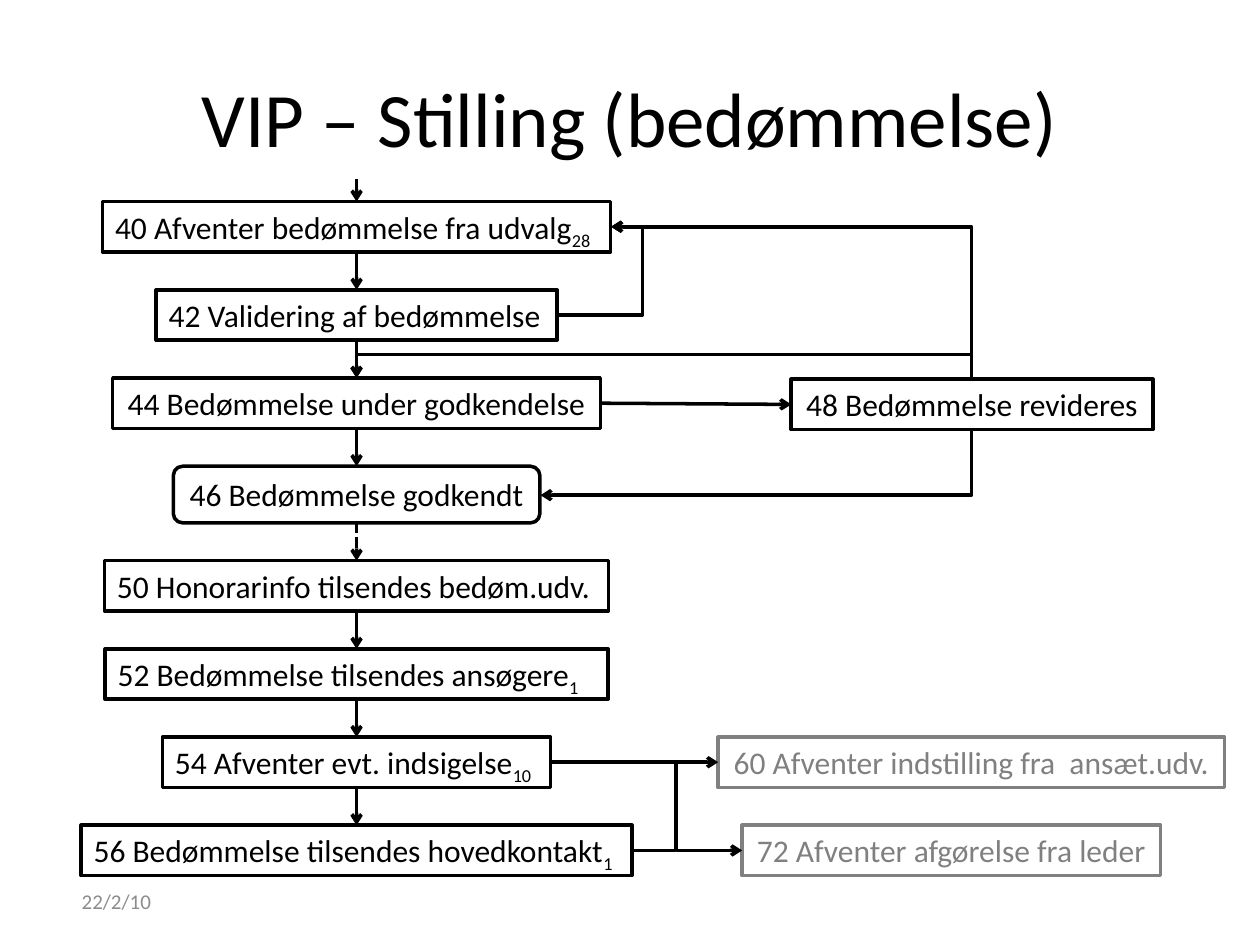
from lxml.etree import SubElement
from pptx import Presentation
from pptx.dml.color import RGBColor
from pptx.enum.dml import MSO_LINE
from pptx.enum.shapes import MSO_CONNECTOR as Connector, MSO_SHAPE as Shape
from pptx.enum.text import MSO_ANCHOR as Anchor, MSO_AUTO_SIZE as AutoSize, PP_ALIGN as Align
from pptx.oxml.ns import qn
from pptx.util import Inches, Pt

# Content
TITLE = "VIP – Stilling (bedømmelse)"
DATE = "22/2/10"
# Main column: text, subscript, width, alignment
STEPS = [
    ("40 Afventer bedømmelse fra udvalg", "28", 4.03, Align.LEFT),
    ("42 Validering af bedømmelse", "", 3.18, Align.LEFT),
    ("44 Bedømmelse under godkendelse", "", 3.87, Align.CENTER),
    ("46 Bedømmelse godkendt", "", 2.91, Align.CENTER),
    ("50 Honorarinfo tilsendes bedøm.udv.", "", 4.00, Align.LEFT),
    ("52 Bedømmelse tilsendes ansøgere", "1", 3.99, Align.LEFT),
    ("54 Afventer evt. indsigelse", "10", 3.08, Align.LEFT),
    ("56 Bedømmelse tilsendes hovedkontakt", "1", 4.37, Align.LEFT),
]
APPROVED = 3  # the rounded step, left by a dashed arrow
# Side boxes: text, left, top, width, colour
SIDE_BOXES = [
    ("48 Bedømmelse revideres", 6.28, 3.01, 2.87, "ink"),
    ("60 Afventer indstilling fra  ansæt.udv.", 5.70, 5.85, 4.02, "muted"),
    ("72 Afventer afgørelse fra leder", 5.89, 6.55, 3.32, "muted"),
]
# Elbows that leave sideways: start, end, x of the upright part
SIDE_ELBOWS = [
    ((4.42, 2.50), (4.85, 1.80), 5.10),
    ((4.37, 6.05), (5.89, 6.75), 5.37),
    ((5.02, 6.75), (5.70, 6.05), 5.36),
]
# Elbows that leave box 48 up or down: start, end, y of the level part (None: one bend)
UPRIGHT_ELBOWS = [
    ((7.71, 3.01), (4.85, 1.80), None),
    ((7.71, 3.41), (4.29, 3.93), None),
    ((7.71, 3.01), (2.83, 3.00), 2.81),
]

THEME = {
    "font": "Calibri",
    "ink": RGBColor(0x00, 0x00, 0x00),
    "muted": RGBColor(0x80, 0x80, 0x80),
    "date": RGBColor(0x8C, 0x8C, 0x8C),
    "title_size": Pt(44), "box_size": Pt(18), "date_size": Pt(12), "line": Pt(2),
}
AXIS, FIRST_TOP, STEP, BOX_HEIGHT, ROUND_HEIGHT = 2.83, 1.60, 0.70, 0.40, 0.45


def set_all(target, values):
    for name, value in values.items():
        setattr(target, name, value)


def write(shape, text, size, color, align, anchor, subscript="", **frame_format):
    frame = shape.text_frame
    set_all(frame, {"vertical_anchor": anchor, **frame_format})
    paragraph = frame.paragraphs[0]
    paragraph.alignment = align
    for part in filter(None, (text, subscript)):
        run = paragraph.add_run()
        run.text = part
        set_all(run.font, {"name": THEME["font"], "size": THEME[size]})
        run.font.color.rgb = THEME[color]
    if subscript:
        run.font._element.set("baseline", "-25000")


def add_box(slide, text, left, top, width, height=BOX_HEIGHT, kind=Shape.FLOWCHART_PROCESS,
            color="ink", align=Align.CENTER, subscript=""):
    box = slide.shapes.add_shape(kind, *map(Inches, (left, top, width, height)))
    box.shadow.inherit = False
    box.fill.background()
    box.line.color.rgb = THEME[color]
    box.line.width = THEME["line"]
    write(box, text, "box_size", color, align, Anchor.TOP, subscript,
          word_wrap=False, auto_size=AutoSize.SHAPE_TO_FIT_TEXT)
    return box


def add_arrow(slide, start, end, kind=Connector.STRAIGHT):
    arrow = slide.shapes.add_connector(kind, *map(Inches, (*start, *end)))
    arrow.line.color.rgb = THEME["ink"]
    arrow.line.width = THEME["line"]
    SubElement(arrow.line._get_or_add_ln(), qn("a:tailEnd"), type="arrow")
    SubElement(arrow._element.spPr, qn("a:effectLst"))
    return arrow


def set_bend(arrow, share):
    guides = arrow._element.spPr.find(qn("a:prstGeom")).get_or_add_avLst()
    SubElement(guides, qn("a:gd"), name="adj1", fmla=f"val {round(share * 100000)}")


def add_side_elbow(slide, start, end, bend):
    arrow = add_arrow(slide, start, end, Connector.ELBOW)
    set_bend(arrow, (bend - start[0]) / (end[0] - start[0]))


def add_upright_elbow(slide, start, end, bend):
    """A leftward elbow is a level one turned a quarter about its centre."""
    (x1, y1), (x2, y2) = start, end
    length, breadth = abs(y2 - y1), abs(x2 - x1)
    arrow = add_arrow(slide, start, end, Connector.ELBOW)
    set_all(arrow, {
        "left": Inches((x1 + x2 - length) / 2), "top": Inches((y1 + y2 - breadth) / 2),
        "width": Inches(length), "height": Inches(breadth),
    })
    upward = y2 < y1
    frame = arrow._element.spPr.find(qn("a:xfrm"))
    set_all(frame, {"rot": 270 if upward else 90, "flipH": False, "flipV": upward})
    if bend is None:
        arrow._element.spPr.find(qn("a:prstGeom")).set("prst", "bentConnector2")
    else:
        set_bend(arrow, (bend - y1) / (y2 - y1))


def main():
    presentation = Presentation()
    presentation.slide_width, presentation.slide_height = Inches(10), Inches(7.5)
    slide = presentation.slides.add_slide(presentation.slide_layouts[5])

    # Title and date
    title = slide.shapes.title
    set_all(title, {"left": Inches(0.5), "top": Inches(0.3),
                    "width": Inches(9), "height": Inches(1.25)})
    write(title, TITLE, "title_size", "ink", Align.CENTER, Anchor.MIDDLE)
    date = slide.shapes.add_textbox(*map(Inches, (0.55, 6.95, 2.33, 0.4)))
    write(date, DATE, "date_size", "date", Align.LEFT, Anchor.MIDDLE, word_wrap=True)

    # Main column, each box joined to the one above
    bottom = 1.42
    top = FIRST_TOP
    for index, (text, subscript, width, align) in enumerate(STEPS):
        rounded = index == APPROVED
        height = ROUND_HEIGHT if rounded else BOX_HEIGHT
        kind = Shape.FLOWCHART_ALTERNATE_PROCESS if rounded else Shape.FLOWCHART_PROCESS
        add_box(slide, text, AXIS - width / 2, top, width, height, kind,
                align=align, subscript=subscript)
        arrow = add_arrow(slide, (AXIS, bottom), (AXIS, top))
        if index == APPROVED + 1:
            arrow.line.dash_style = MSO_LINE.SQUARE_DOT
        bottom = top + height
        top += STEP + height - BOX_HEIGHT

    # Side boxes and the arrows to and from them
    for text, left, top, width, color in SIDE_BOXES:
        add_box(slide, text, left, top, width, color=color)
    add_arrow(slide, (4.77, 3.20), (6.28, 3.21))
    for elbow in SIDE_ELBOWS:
        add_side_elbow(slide, *elbow)
    for elbow in UPRIGHT_ELBOWS:
        add_upright_elbow(slide, *elbow)

    presentation.save("out.pptx")


if __name__ == "__main__":
    main()
